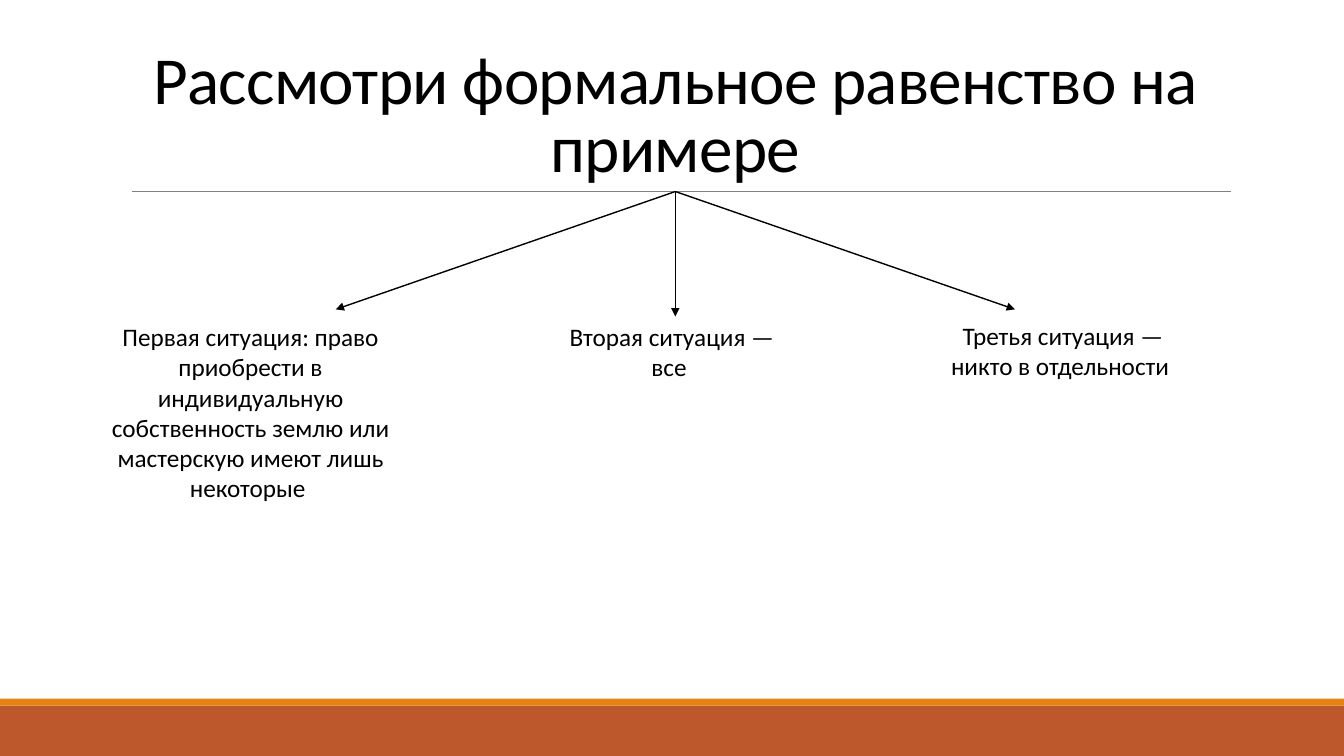
from dataclasses import dataclass

from lxml import etree
from pptx import Presentation
from pptx.dml.color import RGBColor
from pptx.enum.shapes import MSO_CONNECTOR, MSO_SHAPE
from pptx.enum.text import MSO_ANCHOR, MSO_AUTO_SIZE, PP_ALIGN
from pptx.oxml.ns import qn
from pptx.util import Pt

RECT = MSO_SHAPE.RECTANGLE
STRAIGHT = MSO_CONNECTOR.STRAIGHT
TOP, BOTTOM = MSO_ANCHOR.TOP, MSO_ANCHOR.BOTTOM
CENTER = PP_ALIGN.CENTER
FIT_SHAPE, NO_FIT = MSO_AUTO_SIZE.SHAPE_TO_FIT_TEXT, MSO_AUTO_SIZE.NONE
BOTTOM_SITE = 2


@dataclass(frozen=True)
class Theme:
    font: str = "Calibri"
    title_size: float = 48
    body_size: float = 18
    text: str = "000000"
    rule: str = "808080"
    band: str = "BD582C"
    accent: str = "E48312"


THEME = Theme()
WIDTH, HEIGHT = 960, 540
BAND_TOP, ACCENT_TOP = 504, 499
TITLE_BOX = (86.4, 22.32, 792, 114.48)
TITLE_CENTER = TITLE_BOX[0] + TITLE_BOX[2] / 2
TITLE_BOTTOM = TITLE_BOX[1] + TITLE_BOX[3]
ARROW_SPREAD = 242.6

# Text, then left, top, width and height
SITUATIONS = [
    ("Первая ситуация: право приобрести в индивидуальную собственность "
     "землю или мастерскую имеют лишь некоторые ", (63.4, 226.1, 231.1, 138.2)),
    ("Вторая ситуация — все ", (385.9, 226.1, 187.9, 51.1)),
    ("Третья ситуация — никто в отдельности ", (665.3, 225.4, 187.9, 51.1)),
]


def add_band(s, top, height, color):
    sp = s.shapes.add_shape(RECT, 0, Pt(top), Pt(WIDTH), Pt(height))
    sp.shadow.inherit = False
    sp.fill.solid()
    sp.fill.fore_color.rgb = RGBColor.from_string(color)
    sp.line.fill.background()


def add_text(s, text, box, *, size=THEME.body_size, anchor=TOP,
             auto_size=FIT_SHAPE, line_spacing=1.0, tracking=0):
    sp = s.shapes.add_textbox(*map(Pt, box))
    tf = sp.text_frame
    tf.word_wrap = True
    tf.auto_size = auto_size
    tf.vertical_anchor = anchor
    p = tf.paragraphs[0]
    p.alignment = CENTER
    p.line_spacing = line_spacing
    r = p.add_run()
    r.text = text
    r.font.name = THEME.font
    r.font.size = Pt(size)
    r.font.color.rgb = RGBColor.from_string(THEME.text)
    if tracking:
        r.font._element.set("spc", str(round(tracking * 100)))
    return sp


def add_line(s, start, end, color, width, *, source=None, arrow=False):
    line = s.shapes.add_connector(STRAIGHT, *map(Pt, start + end))
    if source is not None:
        line.begin_connect(source, BOTTOM_SITE)
    line.line.color.rgb = RGBColor.from_string(color)
    line.line.width = Pt(width)
    if arrow:
        ln = line.line._get_or_add_ln()
        etree.SubElement(ln, qn("a:tailEnd"), type="triangle")
    etree.SubElement(line._element.spPr, qn("a:effectLst"))


def main():
    prs = Presentation()
    prs.slide_width, prs.slide_height = Pt(WIDTH), Pt(HEIGHT)
    s = prs.slides.add_slide(prs.slide_layouts[6])

    # Footer bands and the rule under the title
    add_band(s, BAND_TOP, HEIGHT - BAND_TOP, THEME.band)
    add_band(s, ACCENT_TOP, BAND_TOP - ACCENT_TOP, THEME.accent)
    add_line(s, (94.3, TITLE_BOTTOM), (879, TITLE_BOTTOM), THEME.rule, 0.5)

    # Title
    title = add_text(s, "Рассмотри формальное равенство на примере", TITLE_BOX,
                     size=THEME.title_size, anchor=BOTTOM, auto_size=NO_FIT,
                     line_spacing=0.85, tracking=-0.5)

    # Arrows fanning out from the title
    for step, tip in ((0, 226.1), (-1, 221), (1, 221)):
        add_line(s, (TITLE_CENTER, TITLE_BOTTOM),
                 (TITLE_CENTER + step * ARROW_SPREAD, tip),
                 THEME.text, 1, source=title, arrow=True)

    # Three situations
    for text, box in SITUATIONS:
        add_text(s, text, box)

    prs.save("out.pptx")


if __name__ == "__main__":
    main()
